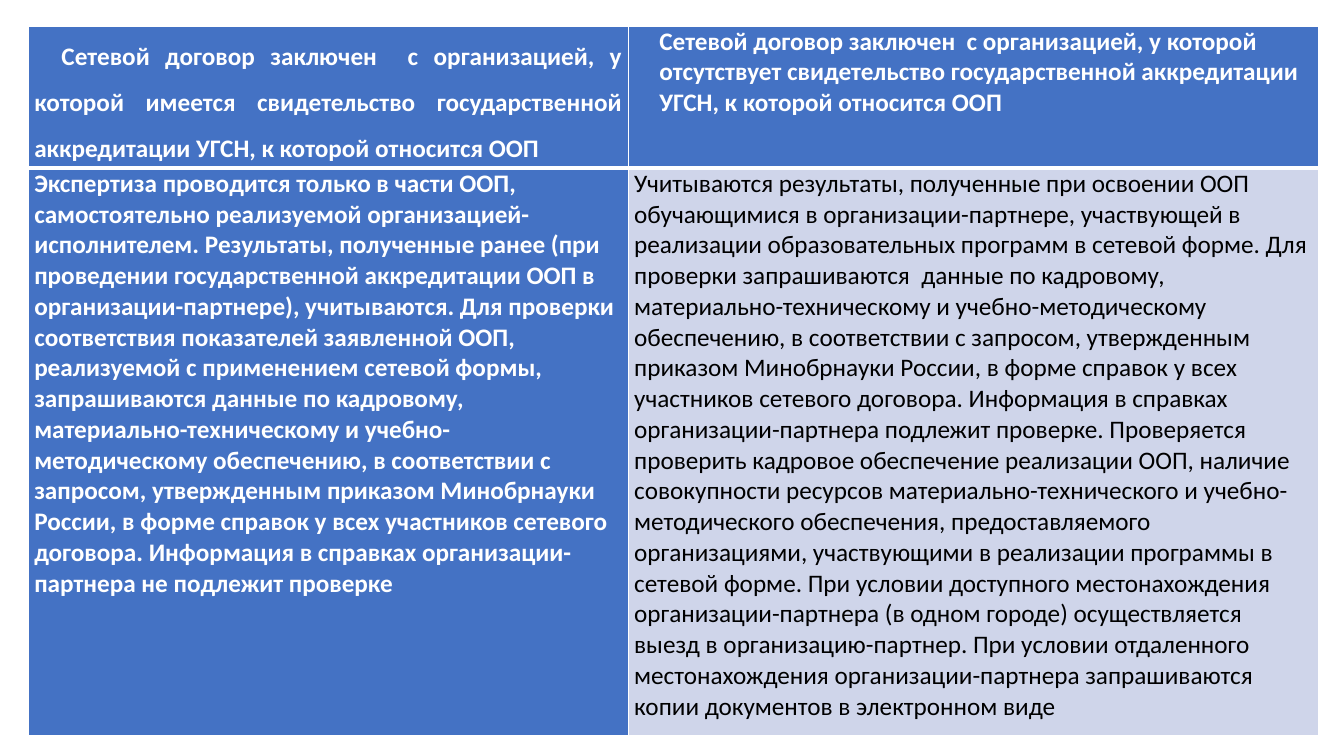
from pptx import Presentation
from pptx import util as u
from pptx.dml.color import RGBColor
from pptx.enum import text
from pptx.oxml import parse_xml
from pptx.oxml.ns import nsdecls

WHITE = RGBColor(0xFF, 0xFF, 0xFF)
BLACK = RGBColor(0, 0, 0)
BLUE = RGBColor(0x44, 0x72, 0xC4)
PALE = RGBColor(0xCF, 0xD5, 0xEA)

FONT, SIZE = "Calibri", 18
LEFT, TOP = 0.28, 0.26
COLUMNS = (5.95, 6.85)
ROWS = (1.41, 5.63)
THIN, THICK = 1, 3

HEADERS = (
    "Сетевой договор заключен  с организацией, у которой имеется свидетельство "
    "государственной аккредитации УГСН, к которой относится ООП ",
    "Сетевой договор заключен  с организацией, у которой отсутствует свидетельство "
    "государственной аккредитации УГСН, к которой относится ООП",
)
DATA_REQUEST = (
    "данные по кадровому, материально-техническому и учебно-методическому обеспечению, "
    "в соответствии с запросом, утвержденным приказом Минобрнауки России, в форме справок "
    "у всех участников сетевого договора. Информация в справках организации-партнера "
)
ACCREDITED = (
    "Экспертиза проводится только в части ООП, самостоятельно реализуемой "
    "организацией-исполнителем. Результаты, полученные ранее (при проведении "
    "государственной аккредитации ООП в организации-партнере), учитываются. "
    "Для проверки соответствия показателей заявленной ООП, реализуемой с применением "
    "сетевой формы, запрашиваются " + DATA_REQUEST + "не подлежит проверке"
)
NOT_ACCREDITED = (
    "Учитываются результаты, полученные при освоении ООП обучающимися в "
    "организации-партнере, участвующей в реализации образовательных программ в сетевой "
    "форме. Для проверки запрашиваются  " + DATA_REQUEST + "подлежит проверке. "
    "Проверяется проверить кадровое обеспечение реализации ООП, наличие совокупности "
    "ресурсов материально-технического и учебно-методического обеспечения, "
    "предоставляемого организациями, участвующими в реализации программы в сетевой форме. "
    "При условии доступного местонахождения организации-партнера (в одном городе) "
    "осуществляется выезд в организацию-партнер. При условии отдаленного "
    "местонахождения организации-партнера запрашиваются копии документов в электронном виде"
)


def set_borders(cell, top, bottom):
    """Draw white cell borders; the side borders are thin. Call before filling."""
    tcPr = cell._tc.get_or_add_tcPr()
    for side, width in (("L", THIN), ("R", THIN), ("T", top), ("B", bottom)):
        tcPr.append(parse_xml(
            f'<a:ln{side} {nsdecls("a")} w="{u.Pt(width)}"><a:solidFill>'
            f'<a:srgbClr val="{WHITE}"/></a:solidFill></a:ln{side}>'))


def write_cell(cell, words, fill, color=WHITE, bold=True):
    cell.margin_left = cell.margin_right = u.Inches(0.06)
    cell.margin_top = cell.margin_bottom = 0
    cell.fill.solid()
    cell.fill.fore_color.rgb = fill
    p = cell.text_frame.paragraphs[0]
    r = p.add_run()
    r.text = words
    r.font.name, r.font.size, r.font.bold = FONT, u.Pt(SIZE), bold
    r.font.color.rgb = color
    return p


def indent(p, margin, first_line):
    pPr = p._p.get_or_add_pPr()
    pPr.set("marL", str(u.Inches(margin)))
    pPr.set("indent", str(u.Inches(first_line)))


def add_comparison(s):
    table = s.shapes.add_table(
        len(ROWS), len(COLUMNS), u.Inches(LEFT), u.Inches(TOP),
        u.Inches(sum(COLUMNS)), u.Inches(sum(ROWS))).table
    for column, width in zip(table.columns, COLUMNS):
        column.width = u.Inches(width)
    for row, height in zip(table.rows, ROWS):
        row.height = u.Inches(height)
    for col in range(len(COLUMNS)):
        set_borders(table.cell(0, col), THIN, THICK)
        set_borders(table.cell(1, col), THICK, THIN)

    left, right = (write_cell(table.cell(0, col), words, BLUE)
                   for col, words in enumerate(HEADERS))
    left.alignment = text.PP_ALIGN.JUSTIFY
    left.line_spacing = 1.5
    indent(left, 0, 0.27)
    indent(right, 0.25, 0)
    write_cell(table.cell(1, 0), ACCREDITED, BLUE)
    write_cell(table.cell(1, 1), NOT_ACCREDITED, PALE, BLACK, False)


def main():
    prs = Presentation()
    prs.slide_width, prs.slide_height = u.Inches(13.33), u.Inches(7.5)
    s = prs.slides.add_slide(prs.slide_layouts[6])
    s.background.fill.solid()
    s.background.fill.fore_color.rgb = WHITE
    add_comparison(s)
    prs.save("out.pptx")


if __name__ == "__main__":
    main()
